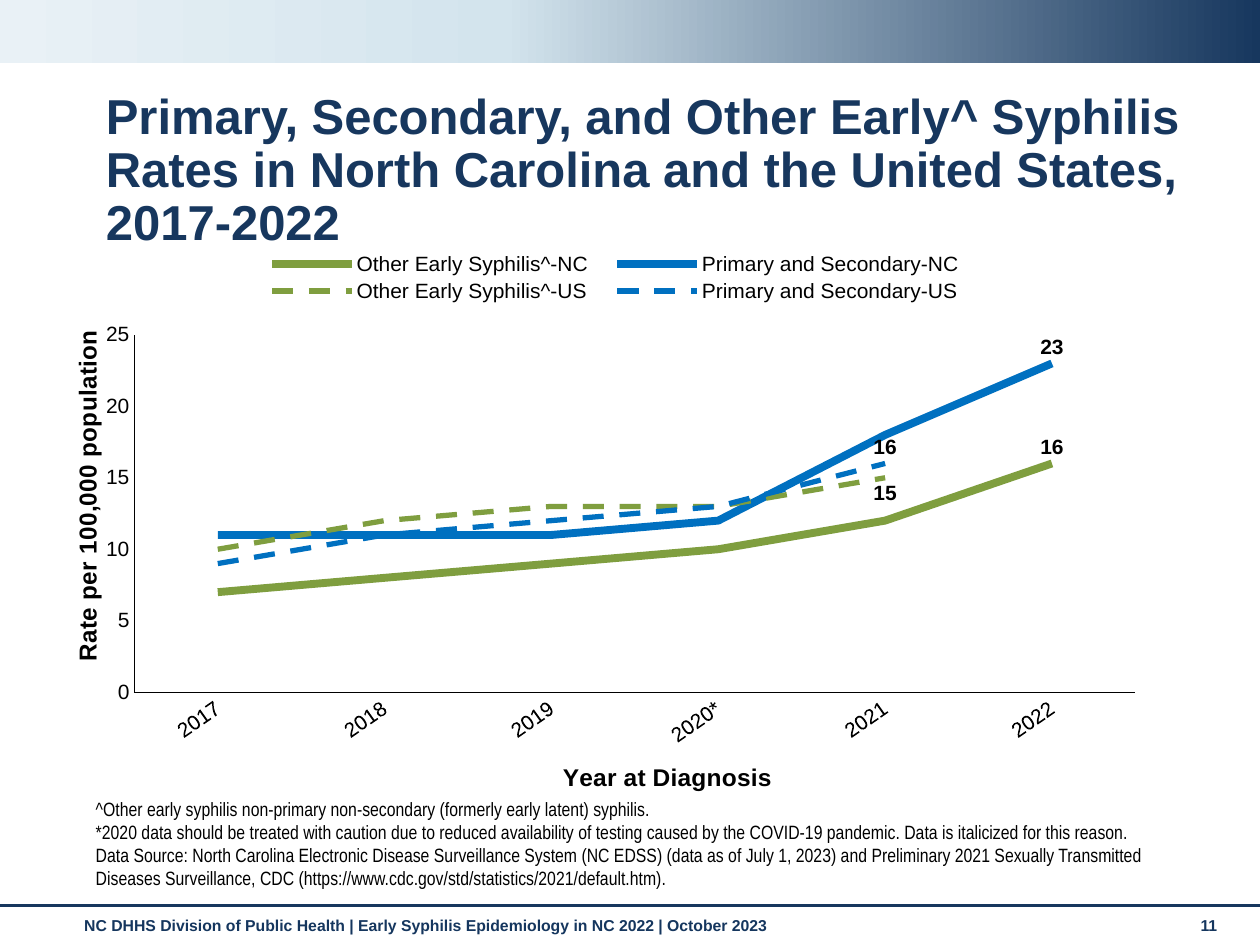
"""Builds the slide on early syphilis rates in North Carolina and the United States."""
import copy

import lxml.etree
import pptx
import pptx.chart.data
import pptx.dml.color
import pptx.enum.chart
import pptx.enum.dml
import pptx.enum.shapes
import pptx.enum.text
import pptx.oxml.ns
import pptx.util

Inches = pptx.util.Inches
Pt = pptx.util.Pt
RGB = pptx.dml.color.RGBColor.from_string
qn = pptx.oxml.ns.qn
ANCHOR = pptx.enum.text.MSO_ANCHOR
LABEL = pptx.enum.chart.XL_LABEL_POSITION
DASH = pptx.enum.dml.MSO_LINE
COLORS = {"navy": "17375E", "footer": "15365E", "mist": "D3E4ED", "pale": "E9F1F6",
          "green": "7F9E3F", "blue": "0070C0", "black": "000000"}


def write(frame, text, size, color="black", bold=False, font="Arial", spacing=1.0):
    """Fill a text frame with one left-aligned paragraph per line of text."""
    for number, line in enumerate(text.split("\n")):
        paragraph = frame.add_paragraph() if number else frame.paragraphs[0]
        paragraph.line_spacing = spacing
        paragraph.space_before = Pt(0)
        paragraph.alignment = pptx.enum.text.PP_ALIGN.LEFT
        run = paragraph.add_run()
        run.text = line
        run.font.name, run.font.size, run.font.bold = font, Pt(size), bold
        run.font.color.rgb = RGB(COLORS[color])


def arrange(element, index, **settings):
    """Give a chart part a manual layout in fractions of the chart."""
    for old in element.findall(qn("c:layout")):
        element.remove(old)
    layout = lxml.etree.Element(qn("c:layout"))
    manual = lxml.etree.SubElement(layout, qn("c:manualLayout"))
    for tag, value in settings.items():
        lxml.etree.SubElement(manual, qn("c:" + tag)).set("val", str(value))
    element.insert(index, layout)


deck = pptx.Presentation()
deck.slide_width, deck.slide_height = Inches(10), Inches(7.5)
slide = deck.slides.add_slide(deck.slide_layouts[1])

band = slide.shapes.add_shape(pptx.enum.shapes.MSO_SHAPE.RECTANGLE, 0, 0, Inches(10), Inches(0.5))
band.shadow.inherit = False
band.line.fill.background()
band.fill.gradient()
band.fill.gradient_angle = 180
stop_list = band.fill._xPr.find(qn("a:gradFill")).find(qn("a:gsLst"))
stop_list.insert(1, copy.deepcopy(stop_list[0]))
for stop, (position, color) in zip(band.fill.gradient_stops, [(0, "navy"), (0.6, "mist"), (1, "pale")]):
    stop.position = position
    stop.color.rgb = RGB(COLORS[color])

rule = slide.shapes.add_connector(pptx.enum.shapes.MSO_CONNECTOR.STRAIGHT,
                                  0, Inches(7.19), Inches(10), Inches(7.19))
rule.line.color.rgb = RGB(COLORS["navy"])
rule.line.width = Pt(1.75)
lxml.etree.SubElement(rule._element.spPr, qn("a:effectLst"))

for text, left, width in [
    ("NC DHHS Division of Public Health | Early Syphilis Epidemiology in NC 2022 | October 2023", 0.57, 8.74),
    ("11", 9.43, 0.44),
]:
    footer = slide.shapes.add_textbox(Inches(left), Inches(7.22), Inches(width), Inches(0.3))
    footer.text_frame.word_wrap = True
    write(footer.text_frame, text, 9, color="footer", bold=True)

heading, notes = slide.shapes.title, slide.placeholders[1]
for holder, box, anchor in [(heading, (0.74, 0.68, 8.93, 0.6), ANCHOR.TOP),
                            (notes, (0.66, 6.57, 8.74, 0.54), ANCHOR.BOTTOM)]:
    holder.left, holder.top, holder.width, holder.height = map(Inches, box)
    holder.text_frame.word_wrap = True
    holder.text_frame.auto_size = pptx.enum.text.MSO_AUTO_SIZE.NONE
    holder.text_frame.vertical_anchor = anchor

write(heading.text_frame,
      "Primary, Secondary, and Other Early^ Syphilis Rates in North Carolina and the United States, 2017-2022",
      28, color="navy", bold=True, spacing=0.9)
write(notes.text_frame,
      "^Other early syphilis non-primary non-secondary (formerly early latent) syphilis.\n"
      "*2020 data should be treated with caution due to reduced availability of testing caused by the "
      "COVID-19 pandemic. Data is italicized for this reason.\n"
      "Data Source: North Carolina Electronic Disease Surveillance System (NC EDSS) (data as of July 1, 2023) "
      "and Preliminary 2021 Sexually Transmitted Diseases Surveillance, CDC "
      "(https://www.cdc.gov/std/statistics/2021/default.htm).",
      11, font="Arial Narrow")
for paragraph in notes.text_frame.paragraphs:
    properties = paragraph._p.get_or_add_pPr()
    properties.set("marL", "0")
    properties.set("indent", "0")
    lxml.etree.SubElement(properties, qn("a:buNone"))

RATES = [
    ("Other Early Syphilis^-NC", (7, 8, 9, 10, 12, 16), "green", 4.5, DASH.SOLID, 5, LABEL.ABOVE),
    ("Primary and Secondary-NC", (11, 11, 11, 12, 18, 23), "blue", 4.5, DASH.SOLID, 5, LABEL.ABOVE),
    ("Other Early Syphilis^-US", (10, 12, 13, 13, 15, None), "green", 3, DASH.DASH, 4, LABEL.BELOW),
    ("Primary and Secondary-US", (9, 11, 12, 13, 16, None), "blue", 3, DASH.DASH, 4, LABEL.ABOVE),
]
rates = pptx.chart.data.CategoryChartData(number_format="0")
rates.categories = ["2017", "2018", "2019", "2020*", "2021", "2022"]
for name, values, *_ in RATES:
    rates.add_series(name, values)
chart = slide.shapes.add_chart(pptx.enum.chart.XL_CHART_TYPE.LINE, Inches(0.35), Inches(1.7),
                               Inches(9.07), Inches(4.64), rates).chart
chart.has_title = False
chart.font.name, chart.font.size = "Arial", Pt(12)
chart.font.color.rgb = RGB(COLORS["black"])
chart.plots[0].vary_by_categories = False
arrange(chart._chartSpace.chart.plotArea, 0, layoutTarget="inner", xMode="edge", yMode="edge",
        x=0.079, y=0.209, w=0.876, h=0.619)

chart.has_legend = True
chart.legend.position = pptx.enum.chart.XL_LEGEND_POSITION.TOP
chart.legend.include_in_layout = False
chart.legend.font.name, chart.legend.font.size = "Arial", Pt(12)
arrange(chart.legend._element, 1, xMode="edge", yMode="edge", x=0.18, y=0.06, w=0.64, h=0.1)

for series, (_, _, color, width, dash, labelled, position) in zip(chart.plots[0].series, RATES):
    series.smooth = False
    series.marker.style = pptx.enum.chart.XL_MARKER_STYLE.NONE
    series.format.line.color.rgb = RGB(COLORS[color])
    series.format.line.width = Pt(width)
    series.format.line.dash_style = dash
    label = series.points[labelled].data_label
    label.font.name, label.font.size, label.font.bold = "Arial", Pt(12), True
    label.font.color.rgb = RGB(COLORS["black"])
    label.position = position

for axis, title, turn, label_turn, x, y in [
    (chart.category_axis, "Year at Diagnosis", 0, -35, 0.45, 0.94),
    (chart.value_axis, "Rate per 100,000 population", -90, 0, 0.02, 0.2),
]:
    axis.has_major_gridlines = False
    axis.major_tick_mark = axis.minor_tick_mark = pptx.enum.chart.XL_TICK_MARK.NONE
    axis.format.line.color.rgb = RGB(COLORS["black"])
    axis.format.line.width = Pt(0.25)
    axis.tick_labels.font.name, axis.tick_labels.font.size = "Arial", Pt(12)
    axis._element.find(qn("c:txPr")).find(qn("a:bodyPr")).set("rot", str(label_turn * 60000))
    write(axis.axis_title.text_frame, title, 14, bold=True)
    axis.axis_title.text_frame._txBody.find(qn("a:bodyPr")).set("rot", str(turn * 60000))
    arrange(axis.axis_title._element, 1, xMode="edge", yMode="edge", x=x, y=y)

chart.value_axis.minimum_scale, chart.value_axis.maximum_scale = 0, 25
chart.value_axis.major_unit = 5
chart.value_axis.tick_labels.number_format = "0"
chart.value_axis.tick_labels.number_format_is_linked = False

deck.save("out.pptx")
